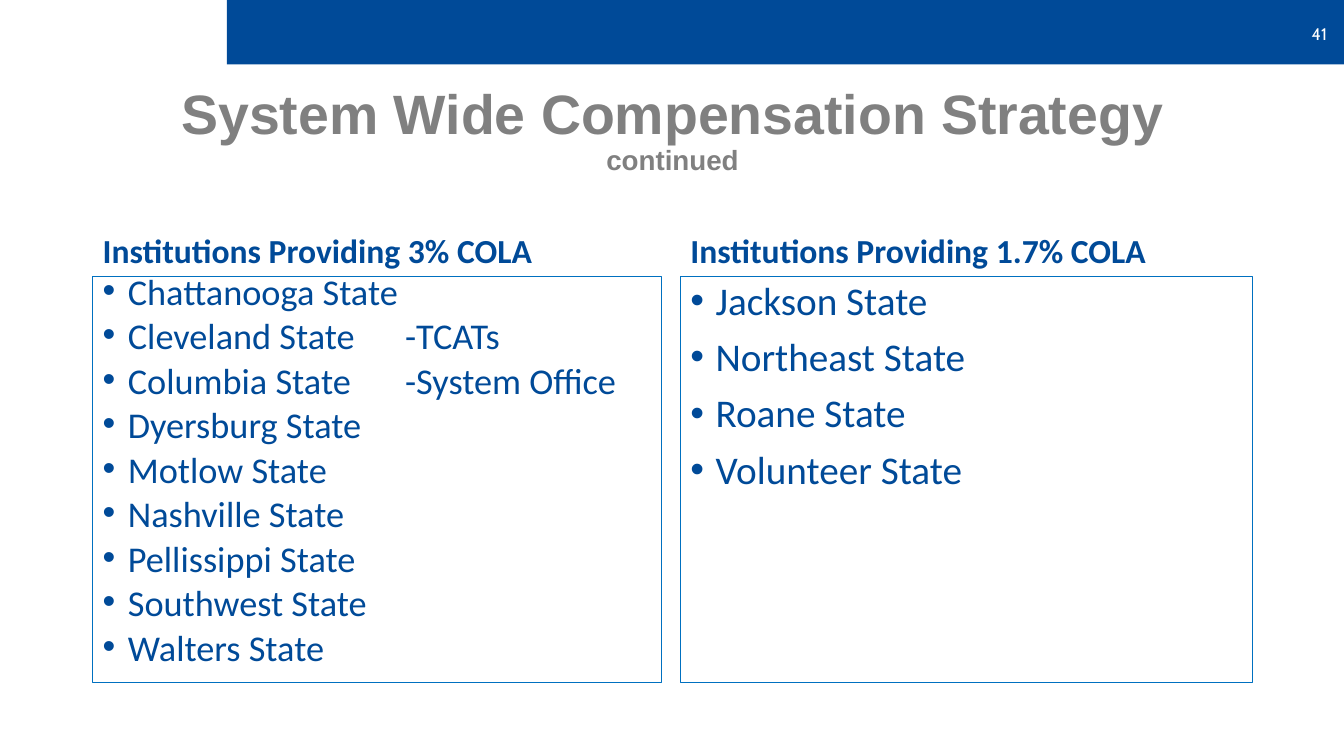
"""Builds the slide comparing institutions by the COLA they provide."""
from pptx import Presentation
from pptx.dml.color import RGBColor
from pptx.enum.shapes import MSO_SHAPE
from pptx.enum.text import MSO_ANCHOR, PP_ALIGN
from pptx.oxml.ns import qn
from pptx.util import Inches, Pt
from lxml import etree

RECTANGLE = MSO_SHAPE.RECTANGLE
TOP, MIDDLE, BOTTOM = MSO_ANCHOR.TOP, MSO_ANCHOR.MIDDLE, MSO_ANCHOR.BOTTOM
LEFT, CENTER, RIGHT = PP_ALIGN.LEFT, PP_ALIGN.CENTER, PP_ALIGN.RIGHT

TITLE = "System Wide Compensation Strategy\vcontinued"
PAGE_NUMBER = "41"
COLUMNS = [
    {
        "heading": "Institutions Providing 3% COLA",
        "institutions": [
            "Chattanooga State", "Cleveland State\t-TCATs",
            "Columbia State\t-System Office", "Dyersburg State",
            "Motlow State", "Nashville State", "Pellissippi State",
            "Southwest State", "Walters State",
        ],
        "left": 0.92, "width": 5.64, "size": 25.9, "spacing": 0.7,
    },
    {
        "heading": "Institutions Providing 1.7% COLA",
        "institutions": ["Jackson State", "Northeast State", "Roane State", "Volunteer State"],
        "left": 6.75, "width": 5.67, "size": 28, "spacing": 0.9,
    },
]
THEME = {
    "blue": RGBColor(0x00, 0x4A, 0x98),
    "border": RGBColor(0x00, 0x70, 0xC0),
    "gray": RGBColor(0x80, 0x80, 0x80),
    "white": RGBColor(0xFF, 0xFF, 0xFF),
    "title_font": "Arial", "body_font": "Calibri", "number_font": "Cabin",
    "title": 39.6, "subtitle": 19.8, "heading": 24, "number": 12,
}
HEADING_TOP, HEADING_HEIGHT = 1.84, 0.9
LIST_TOP, LIST_HEIGHT = HEADING_TOP + HEADING_HEIGHT, 4.03
BULLET_INDENT, SECOND_COLUMN_TAB = 0.25, 3
PARAGRAPH_GAP = 10


def style(font, name, size, color, bold=False):
    font.name, font.size, font.bold = name, Pt(size), bold
    font.color.rgb = color


def add_rectangle(slide, box):
    rectangle = slide.shapes.add_shape(RECTANGLE, *map(Inches, box))
    rectangle.shadow.inherit = False
    return rectangle


def add_text(slide, box, text, anchor, align, spacing=1.0):
    frame = slide.shapes.add_textbox(*map(Inches, box)).text_frame
    frame.word_wrap, frame.vertical_anchor = True, anchor
    frame.text = text
    paragraph = frame.paragraphs[0]
    paragraph.alignment, paragraph.line_spacing = align, spacing
    return paragraph


def add_bullet(paragraph):
    properties = paragraph._p.get_or_add_pPr()
    properties.set("marL", str(Inches(BULLET_INDENT)))
    properties.set("indent", str(-Inches(BULLET_INDENT)))
    etree.SubElement(properties, qn("a:buFont"), typeface="Arial")
    etree.SubElement(properties, qn("a:buChar"), char="•")
    if "\t" in paragraph.text:
        tabs = etree.SubElement(properties, qn("a:tabLst"))
        etree.SubElement(tabs, qn("a:tab"), pos=str(Inches(SECOND_COLUMN_TAB)), algn="l")


def add_column(slide, column):
    left, width = column["left"], column["width"]
    heading = add_text(slide, (left, HEADING_TOP, width, HEADING_HEIGHT),
                       column["heading"], BOTTOM, LEFT, 0.9)
    style(heading.font, THEME["body_font"], THEME["heading"], THEME["blue"], True)

    panel = add_rectangle(slide, (left, LIST_TOP, width, LIST_HEIGHT))
    panel.fill.background()
    panel.line.color.rgb = THEME["border"]
    panel.line.width = Pt(0.75)
    frame = panel.text_frame
    frame.word_wrap, frame.vertical_anchor = True, TOP
    frame.text = "\n".join(column["institutions"])
    for index, institution in enumerate(frame.paragraphs):
        add_bullet(institution)
        institution.alignment = LEFT
        institution.line_spacing = column["spacing"]
        institution.space_before = Pt(PARAGRAPH_GAP if index else 0)
        style(institution.font, THEME["body_font"], column["size"], THEME["blue"])


def main():
    presentation = Presentation()
    presentation.slide_width, presentation.slide_height = Inches(13.33), Inches(7.5)
    slide = presentation.slides.add_slide(presentation.slide_layouts[6])

    banner = add_rectangle(slide, (2.25, 0, 11.08, 0.64))
    banner.fill.solid()
    banner.fill.fore_color.rgb = THEME["blue"]
    banner.line.fill.background()

    title = add_text(slide, (0.92, 0.76, 11.5, 1.09), TITLE, MIDDLE, CENTER, 0.9)
    for run, size in zip(title.runs, (THEME["title"], THEME["subtitle"])):
        style(run.font, THEME["title_font"], size, THEME["gray"], True)

    for column in COLUMNS:
        add_column(slide, column)

    number = add_text(slide, (2.46, 0.14, 10.8, 0.4), PAGE_NUMBER, MIDDLE, RIGHT)
    style(number.font, THEME["number_font"], THEME["number"], THEME["white"])
    presentation.save("out.pptx")


if __name__ == "__main__":
    main()
